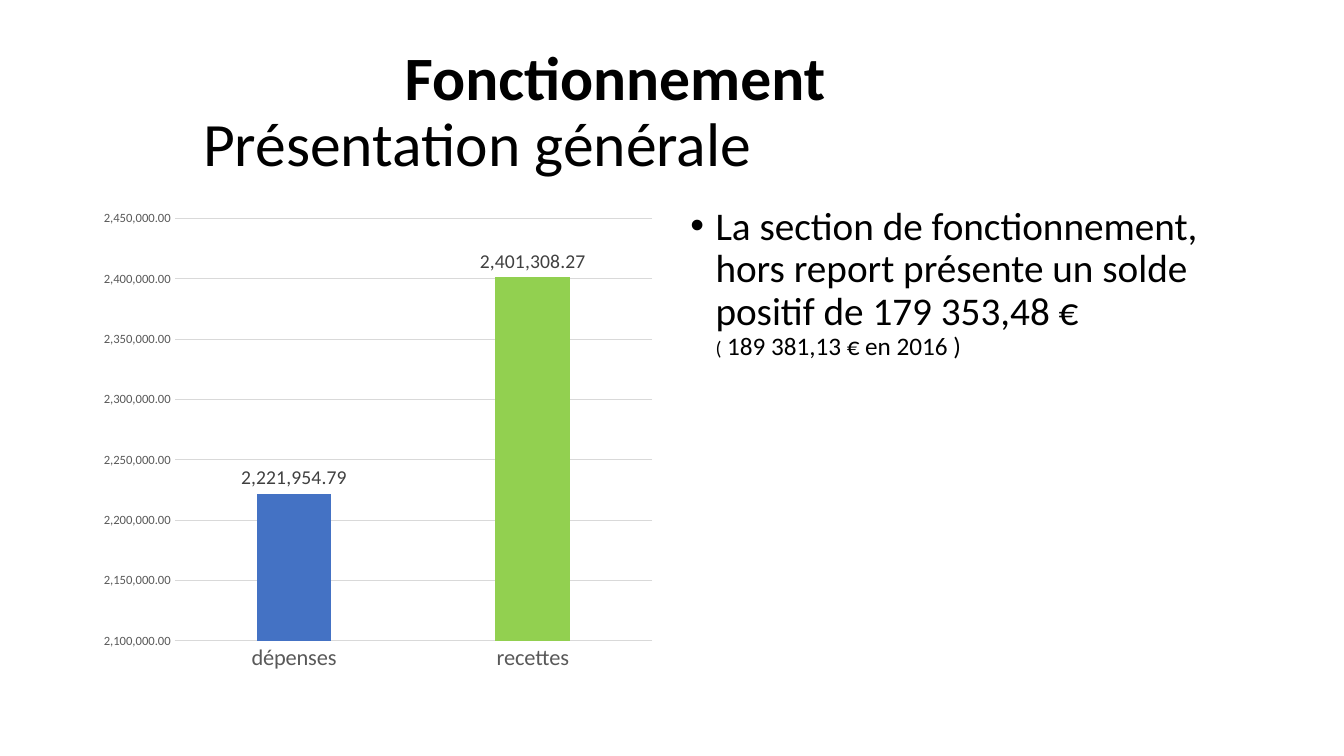
from pptx import Presentation
from pptx.chart.data import CategoryChartData
from pptx.dml.color import RGBColor
from pptx.enum.chart import XL_CHART_TYPE, XL_LABEL_POSITION, XL_TICK_MARK
from pptx.enum.text import MSO_ANCHOR
from pptx.oxml.ns import qn
from pptx.util import Pt
from lxml import etree

COLUMN = XL_CHART_TYPE.COLUMN_CLUSTERED
OUTSIDE = XL_LABEL_POSITION.OUTSIDE_END
NO_TICK = XL_TICK_MARK.NONE
MIDDLE = MSO_ANCHOR.MIDDLE

LEFT, TOP, WIDTH, HEIGHT = 66, 144, 408, 343
RIGHT = 486
FORMAT = "#,##0.00"


def color(code):
    return RGBColor.from_string(code)


def style(font, size, code, bold=False):
    font.name = "Calibri"
    font.size = Pt(size)
    font.bold = bold
    font.color.rgb = color(code)


deck = Presentation()
deck.slide_width, deck.slide_height = Pt(960), Pt(540)
slide = deck.slides.add_slide(deck.slide_layouts[6])

# Title: two lines, each with its own indent
frame = slide.shapes.add_textbox(Pt(LEFT), Pt(28.75), Pt(828), Pt(104.4)).text_frame
frame.word_wrap = True
frame.vertical_anchor = MIDDLE
lines = [("Fonctionnement", True, 216), ("Présentation générale", False, 72)]
for i, (text, bold, indent) in enumerate(lines):
    para = frame.add_paragraph() if i else frame.paragraphs[0]
    para.line_spacing = 0.9
    para._p.get_or_add_pPr().set("marL", str(Pt(indent)))
    run = para.add_run()
    run.text = text
    style(run.font, 44, "000000", bold)

# Chart
data = CategoryChartData(number_format=FORMAT)
data.categories = ["dépenses", "recettes"]
data.add_series("Series 1", [2221954.79, 2401308.27])
chart = slide.shapes.add_chart(
    COLUMN, Pt(LEFT), Pt(TOP), Pt(WIDTH), Pt(HEIGHT), data).chart
chart.has_legend = False
chart.has_title = False
style(chart.font, 10, "000000")

plot = chart.plots[0]
plot.gap_width, plot.overlap = 219, -27
plot.vary_by_categories = False
bars = plot.series[0]
bars.invert_if_negative = False
for i, code in enumerate(["4472C4", "92D050"]):
    fill = bars.points[i].format.fill
    fill.solid()
    fill.fore_color.rgb = color(code)

labels = bars.data_labels
labels.show_value = True
labels.position = OUTSIDE
labels.number_format = FORMAT
labels.number_format_is_linked = False
style(labels.font, 14, "404040")

names, scale = chart.category_axis, chart.value_axis
for axis, size in [(names, 16), (scale, 9)]:
    axis.major_tick_mark = axis.minor_tick_mark = NO_TICK
    style(axis.tick_labels.font, size, "595959")
scale.minimum_scale, scale.maximum_scale = 2100000, 2450000
scale.major_unit = 50000
scale.tick_labels.number_format = FORMAT
scale.tick_labels.number_format_is_linked = False
scale.format.line.fill.background()
for line in (names.format.line, scale.major_gridlines.format.line):
    line.color.rgb = color("D9D9D9")
    line.width = Pt(0.75)

# Bullet beside the chart
frame = slide.shapes.add_textbox(Pt(RIGHT), Pt(TOP), Pt(WIDTH), Pt(HEIGHT)).text_frame
frame.word_wrap = True
para = frame.paragraphs[0]
para.line_spacing = 0.9
para.space_before = Pt(10)
props = para._p.get_or_add_pPr()
props.set("marL", str(Pt(18)))
props.set("indent", str(Pt(-18)))
etree.SubElement(props, qn("a:buFont")).set("typeface", "Arial")
etree.SubElement(props, qn("a:buChar")).set("char", "•")
parts = [
    ("La section de fonctionnement, hors report présente un solde positif de 179 353,48 €", 28),
    ("(", 14),
    (" 189 381,13 € en 2016 )", 18),
]
for text, size in parts:
    if text == "(":
        para.add_line_break()
    run = para.add_run()
    run.text = text
    style(run.font, size, "000000")

deck.save("out.pptx")
